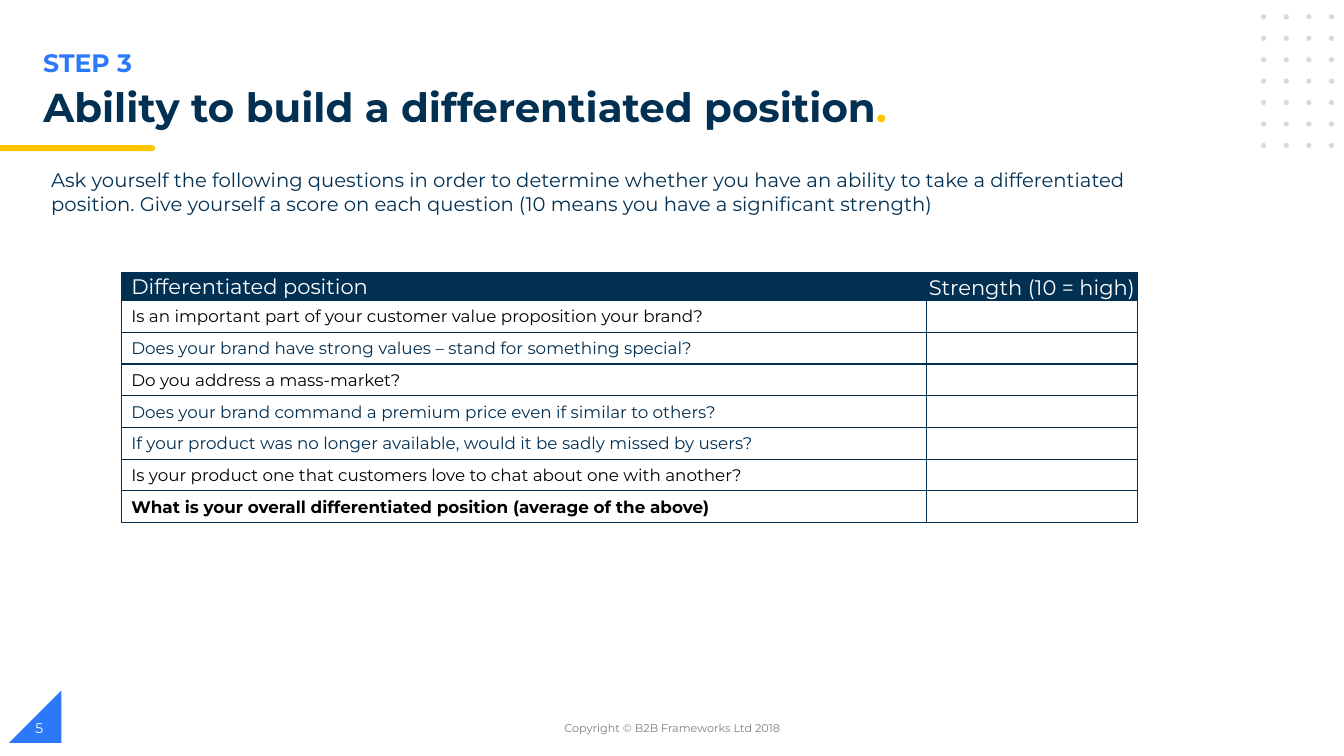
from dataclasses import dataclass

from lxml.etree import SubElement
from pptx import Presentation
from pptx.dml.color import RGBColor
from pptx.enum.shapes import MSO_SHAPE as Shape
from pptx.enum.text import MSO_ANCHOR as Anchor, PP_ALIGN as Align
from pptx.oxml.ns import qn
from pptx.util import Cm, Pt


@dataclass(frozen=True)
class Theme:
    font: str = "Montserrat"
    navy: str = "023053"
    blue: str = "2B79F8"
    yellow: str = "FFC600"
    dot: str = "D1DBE0"
    grey: str = "7F7F7F"
    black: str = "000000"
    white: str = "FFFFFF"
    title: float = 28.8
    step: float = 18
    header: float = 15
    intro: float = 14
    question: float = 12
    number: float = 10
    footer: float = 8


THEME = Theme()

QUESTIONS = [
    ("Is an important part of your customer value proposition your brand?", THEME.black, False),
    ("Does your brand have strong values – stand for something special?", THEME.navy, False),
    ("Do you address a mass-market?", THEME.black, False),
    ("Does your brand command a premium price even if similar to others?", THEME.navy, False),
    ("If your product was no longer available, would it be sadly missed by users?", THEME.navy, False),
    ("Is your product one that customers love to chat about one with another?", THEME.black, False),
    ("What is your overall differentiated position (average of the above)", THEME.black, True),
]


def apply_format(target, **values):
    for name, value in values.items():
        setattr(target, name, value)


def add_span(para, text, size, color, bold=False):
    span = para.add_run()
    span.text = text
    apply_format(span.font, name=THEME.font, size=Pt(size), bold=bold)
    span.font.color.rgb = RGBColor.from_string(color)


def place(shape, left, top, width, height):
    apply_format(shape, left=Cm(left), top=Cm(top), width=Cm(width), height=Cm(height))


def add_plain_shape(page, kind, left, top, width, height, color):
    shape = page.shapes.add_shape(kind, Cm(left), Cm(top), Cm(width), Cm(height))
    shape.shadow.inherit = False
    shape.fill.solid()
    shape.fill.fore_color.rgb = RGBColor.from_string(color)
    shape.line.fill.background()
    return shape


def add_label(page, bounds, text, size, color, bold=False, align=Align.LEFT, anchor=Anchor.TOP):
    box = page.shapes.add_textbox(*(Cm(value) for value in bounds))
    apply_format(box.text_frame, word_wrap=True, vertical_anchor=anchor)
    para = box.text_frame.paragraphs[0]
    para.alignment = align
    add_span(para, text, size, color, bold)


def add_decoration(page):
    corner = add_plain_shape(page, Shape.RIGHT_TRIANGLE, 0.23, 17.4, 1.32, 1.32, THEME.blue)
    corner._element.spPr.xfrm.set("flipH", "1")
    for row in range(7):
        for column in range(4):
            add_plain_shape(page, Shape.OVAL, 31.78 + 0.57 * column, 0.36 + 0.54 * row,
                            0.13, 0.13, THEME.dot)
    add_plain_shape(page, Shape.FLOWCHART_TERMINATOR, 3.4, 3.66, 0.51, 0.15, THEME.yellow)
    add_plain_shape(page, Shape.RECTANGLE, 0, 3.66, 3.58, 0.15, THEME.yellow)


def add_title(page):
    title = page.shapes.title
    place(title, 0.84, 2.08, 22.25, 1.42)
    apply_format(title.text_frame, word_wrap=True, vertical_anchor=Anchor.TOP)
    para = title.text_frame.paragraphs[0]
    apply_format(para, alignment=Align.LEFT, line_spacing=0.9)
    add_span(para, "Ability to build a differentiated position", THEME.title, THEME.navy, True)
    add_span(para, ".", THEME.title, THEME.yellow, True)


def add_borders(cell):
    properties = cell._tc.get_or_add_tcPr()
    for position, side in enumerate(("lnL", "lnR", "lnT", "lnB")):
        line = SubElement(properties, qn(f"a:{side}"), w=str(Pt(1)))
        fill = SubElement(line, qn("a:solidFill"))
        SubElement(fill, qn("a:srgbClr"), val=THEME.navy)
        properties.insert(position, line)


def style_cell(cell, fill=None):
    apply_format(cell, margin_left=Cm(0.03), margin_right=Cm(0.03), margin_top=Cm(0.03),
                 margin_bottom=0, vertical_anchor=Anchor.MIDDLE)
    if fill:
        cell.fill.solid()
        cell.fill.fore_color.rgb = RGBColor.from_string(fill)
    else:
        cell.fill.background()
    add_borders(cell)


def write_indented(cell, text, size, color, bold=False):
    para = cell.text_frame.paragraphs[0]
    para._p.get_or_add_pPr().set("marL", str(Cm(0.21)))
    add_span(para, text, size, color, bold)


def add_score_table(page):
    widths, header_height, row_height = (20.27, 5.33), 0.71, 0.8
    height = header_height + row_height * len(QUESTIONS)
    table = page.shapes.add_table(len(QUESTIONS) + 1, 2, Cm(3.07), Cm(6.86),
                                  Cm(sum(widths)), Cm(height)).table
    apply_format(table, first_row=False, horz_banding=False)
    for column, width in zip(table.columns, widths):
        column.width = Cm(width)
    for index, row in enumerate(table.rows):
        row.height = Cm(row_height if index else header_height)
        for cell in row.cells:
            style_cell(cell, None if index else THEME.navy)

    # Header row
    write_indented(table.cell(0, 0), "Differentiated position", THEME.header, THEME.white)
    strength = table.cell(0, 1)
    strength.vertical_anchor = Anchor.BOTTOM
    para = strength.text_frame.paragraphs[0]
    para.alignment = Align.CENTER
    add_span(para, "Strength (10 = high)", THEME.header, THEME.white)

    # Questions, with the score column left open
    for index, (question, color, bold) in enumerate(QUESTIONS, start=1):
        write_indented(table.cell(index, 0), question, THEME.question, color, bold)


def main():
    deck = Presentation()
    apply_format(deck, slide_width=Cm(33.87), slide_height=Cm(19.05))
    page = deck.slides.add_slide(deck.slide_layouts[5])

    # Background decoration and heading
    add_decoration(page)
    add_label(page, (0.84, 1.07, 17, 1.02), "STEP 3", THEME.step, THEME.blue, bold=True)
    add_title(page)

    # Introduction and scoring table
    add_label(page, (1.04, 4.11, 27.79, 1.45),
              "Ask yourself the following questions in order to determine whether you have "
              "an ability to take a differentiated position. Give yourself a score on each "
              "question (10 means you have a significant strength)", THEME.intro, THEME.navy)
    add_score_table(page)

    # Footer
    add_label(page, (11.23, 17.83, 11.43, 1.02), "Copyright © B2B Frameworks Ltd 2018",
              THEME.footer, THEME.grey, align=Align.CENTER, anchor=Anchor.MIDDLE)
    add_label(page, (0.64, 17.83, 7.62, 1.02), "5", THEME.number, THEME.white,
              anchor=Anchor.MIDDLE)

    deck.save("out.pptx")


if __name__ == "__main__":
    main()
